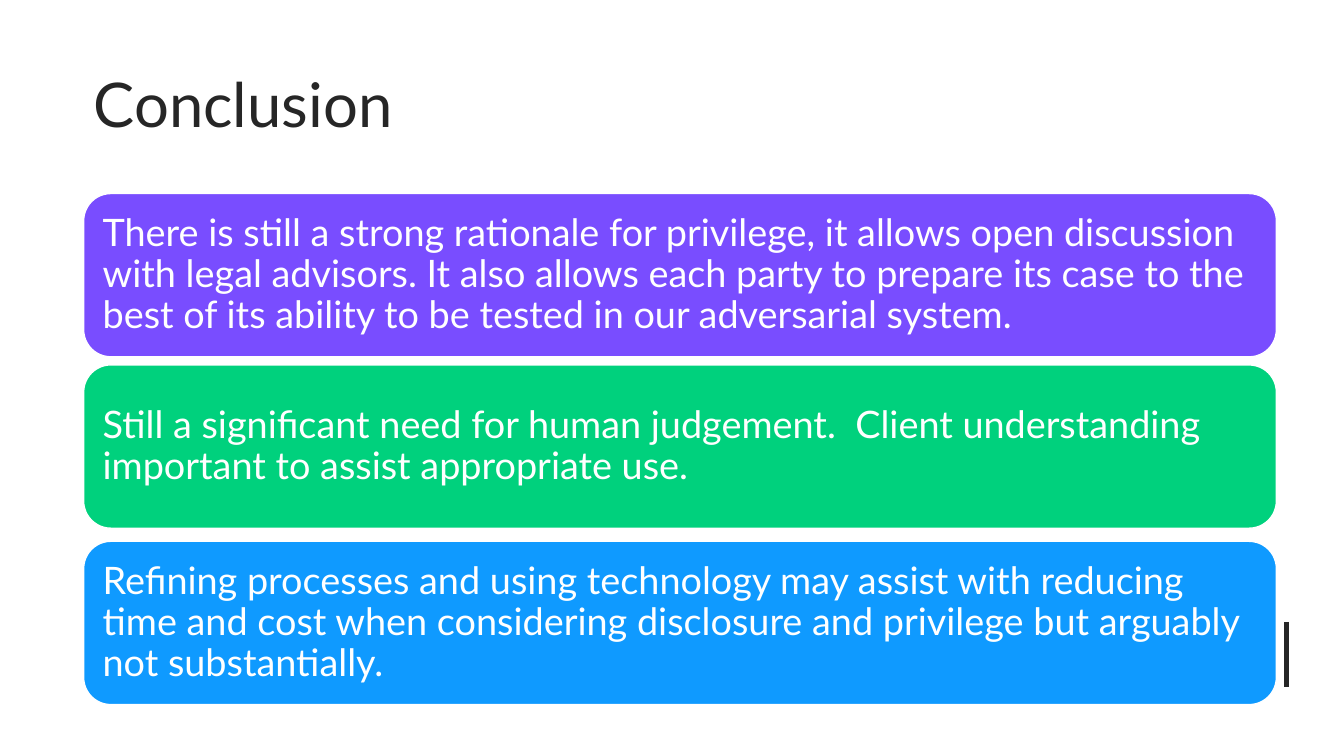
from lxml.etree import SubElement
from pptx import Presentation
from pptx.dml.color import RGBColor
from pptx.enum.shapes import MSO_CONNECTOR, MSO_SHAPE
from pptx.enum.text import MSO_ANCHOR, PP_ALIGN
from pptx.oxml.ns import qn
from pptx.util import Inches, Pt

WHITE = RGBColor(0xFF, 0xFF, 0xFF)
CHARCOAL = RGBColor(0x26, 0x26, 0x26)
PURPLE = RGBColor(0x79, 0x4D, 0xFF)
GREEN = RGBColor(0x00, 0xD1, 0x7D)
BLUE = RGBColor(0x0F, 0x9A, 0xFF)

LEFT = 0.83
CARD_WIDTH, CARD_HEIGHT = 11.83, 1.62
CARD_INSET = 0.11

CARDS = [
    (1.92, PURPLE,
     "There is still a strong rationale for privilege, it allows open "
     "discussion with legal advisors. It also allows each party to prepare "
     "its case to the best of its ability to be tested in our adversarial "
     "system."),
    (3.62, GREEN,
     "Still a significant need for human judgement.  Client understanding "
     "important to assist appropriate use."),
    (5.37, BLUE,
     "Refining processes and using technology may assist with reducing time "
     "and cost when considering disclosure and privilege but arguably not "
     "substantially."),
]


class SlideBuilder:
    font_name = "Lato"

    def __init__(self, slide):
        self.slide = slide

    def set_text(self, shape, text, size, color):
        frame = shape.text_frame
        frame.word_wrap = True
        frame.vertical_anchor = MSO_ANCHOR.MIDDLE
        paragraph = frame.paragraphs[0]
        paragraph.text = text
        paragraph.alignment = PP_ALIGN.LEFT
        paragraph.line_spacing = 0.9
        paragraph.font.name = self.font_name
        paragraph.font.size = Pt(size)
        paragraph.font.color.rgb = color

    def title(self, text):
        box = self.slide.shapes.add_textbox(
            Inches(LEFT), Inches(0.57), Inches(10.49), Inches(1))
        self.set_text(box, text, 44, CHARCOAL)

    def card(self, top, color, text):
        shape = self.slide.shapes.add_shape(
            MSO_SHAPE.ROUNDED_RECTANGLE, Inches(LEFT), Inches(top),
            Inches(CARD_WIDTH), Inches(CARD_HEIGHT))
        shape.shadow.inherit = False
        shape.fill.solid()
        shape.fill.fore_color.rgb = color
        shape.line.color.rgb = WHITE
        shape.line.width = Pt(1)
        frame = shape.text_frame
        frame.margin_left = frame.margin_right = Inches(CARD_INSET)
        frame.margin_top = frame.margin_bottom = Inches(CARD_INSET)
        self.set_text(shape, text, 27, WHITE)

    def vertical_rule(self, x, top, bottom):
        rule = self.slide.shapes.add_connector(
            MSO_CONNECTOR.STRAIGHT,
            Inches(x), Inches(top), Inches(x), Inches(bottom))
        rule.line.color.rgb = CHARCOAL
        rule.line.width = Pt(3)
        SubElement(rule._element.spPr, qn("a:effectLst"))


def main():
    presentation = Presentation()
    presentation.slide_width = Inches(13.33)
    presentation.slide_height = Inches(7.5)
    slide = presentation.slides.add_slide(presentation.slide_layouts[6])
    slide.background.fill.solid()
    slide.background.fill.fore_color.rgb = WHITE

    builder = SlideBuilder(slide)
    builder.title("Conclusion")
    builder.vertical_rule(12.76, 6.17, 6.82)
    for top, color, text in CARDS:
        builder.card(top, color, text)
    presentation.save("out.pptx")


if __name__ == "__main__":
    main()
